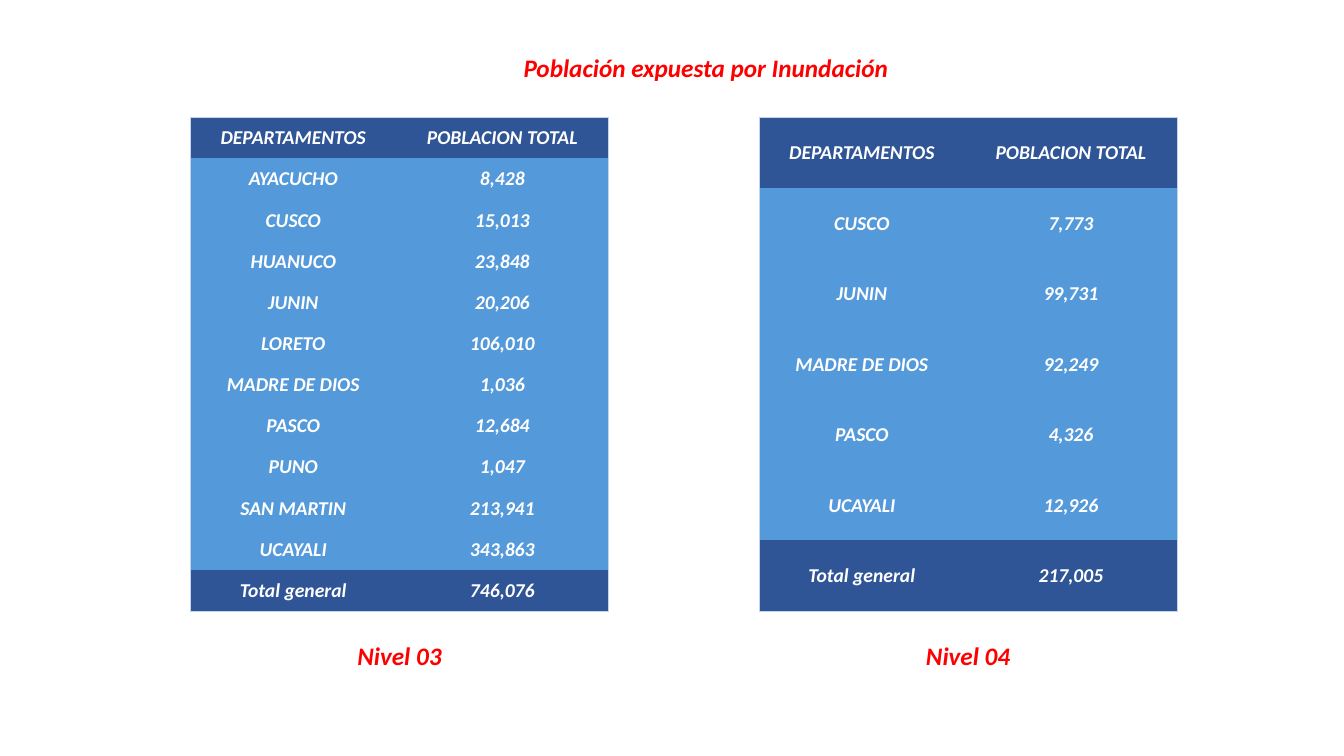
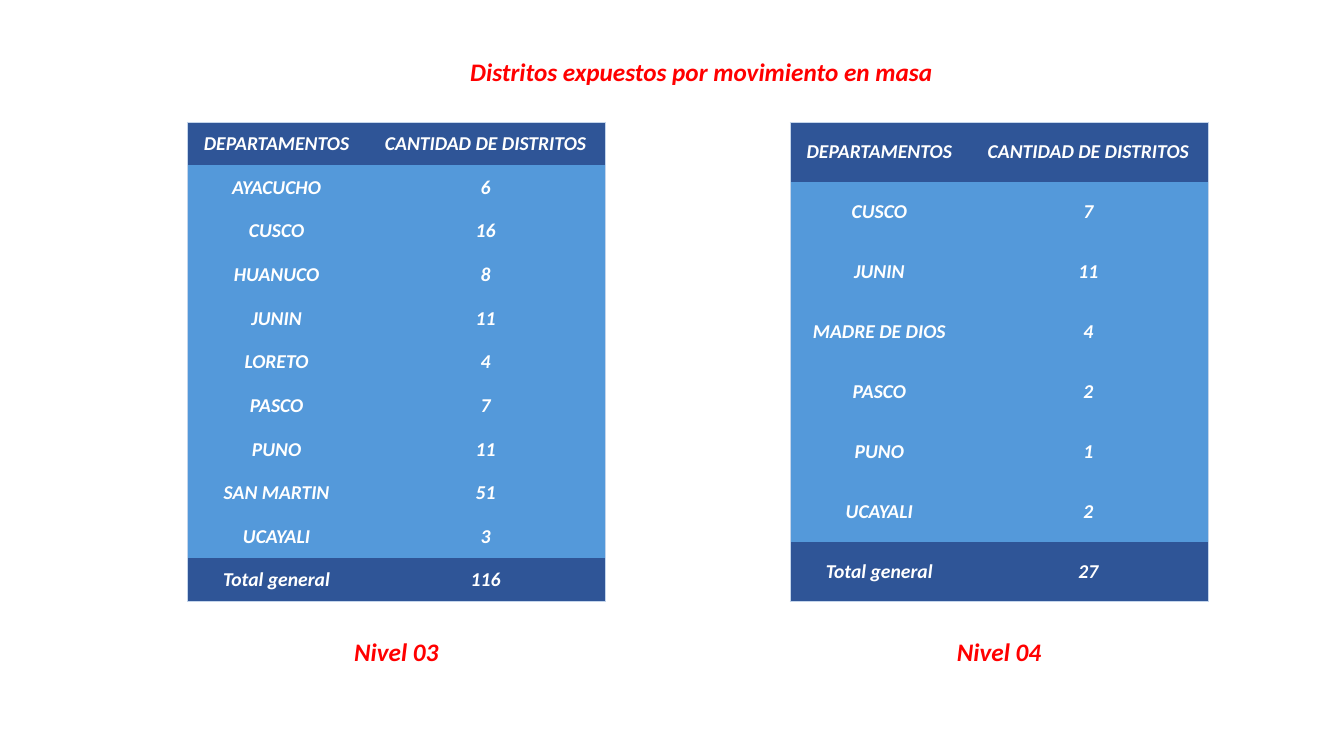
from lxml.etree import SubElement
from pptx import Presentation
from pptx.dml.color import RGBColor as Rgb
from pptx.enum.text import MSO_ANCHOR as Anchor, MSO_AUTO_SIZE as AutoSize, PP_ALIGN as Align
from pptx.oxml.ns import qn
from pptx.util import Cm, Pt

COLORS = {
    "heading": "FF0000",
    "band": "2F5597",
    "body": "5499DA",
    "text": "FFFFFF",
    "border": "C4D5EB",
}
FONT = "Calibri"
NO_GRID_STYLE = "{2D5ABB26-0587-4C30-8999-92F81FD0307C}"
TABLE_WIDTH = 10.54
HEADING_HEIGHT = 1.02
CAPTION_WIDTH = 2.8

SLIDES = [
    {
        "title": "Población expuesta por Inundación",
        "title_box": (12.9, 1.19, 9.78),
        "measure": "POBLACION TOTAL",
        "first_column": 5.18,
        "top": 2.95,
        "height": 12.45,
        "caption_top": 16,
        "levels": [
            ("Nivel 03", 4.8, [
                ("AYACUCHO", "8,428"),
                ("CUSCO", "15,013"),
                ("HUANUCO", "23,848"),
                ("JUNIN", "20,206"),
                ("LORETO", "106,010"),
                ("MADRE DE DIOS", "1,036"),
                ("PASCO", "12,684"),
                ("PUNO", "1,047"),
                ("SAN MARTIN", "213,941"),
                ("UCAYALI", "343,863"),
                ("Total general", "746,076"),
            ]),
            ("Nivel 04", 19.13, [
                ("CUSCO", "7,773"),
                ("JUNIN", "99,731"),
                ("MADRE DE DIOS", "92,249"),
                ("PASCO", "4,326"),
                ("UCAYALI", "12,926"),
                ("Total general", "217,005"),
            ]),
        ],
    },
    {
        "title": "Distritos expuestos por movimiento en masa",
        "title_box": (11.53, 1.3, 12.29),
        "measure": "CANTIDAD DE DISTRITOS",
        "first_column": 4.5,
        "top": 3.07,
        "height": 12.09,
        "caption_top": 15.9,
        "levels": [
            ("Nivel 03", 4.72, [
                ("AYACUCHO", "6"),
                ("CUSCO", "16"),
                ("HUANUCO", "8"),
                ("JUNIN", "11"),
                ("LORETO", "4"),
                ("PASCO", "7"),
                ("PUNO", "11"),
                ("SAN MARTIN", "51"),
                ("UCAYALI", "3"),
                ("Total general", "116"),
            ]),
            ("Nivel 04", 19.91, [
                ("CUSCO", "7"),
                ("JUNIN", "11"),
                ("MADRE DE DIOS", "4"),
                ("PASCO", "2"),
                ("PUNO", "1"),
                ("UCAYALI", "2"),
                ("Total general", "27"),
            ]),
        ],
    },
]


def write(frame, text, size, color):
    """Put one centred bold italic line into a text frame."""
    frame.text = text
    line = frame.paragraphs[0]
    line.alignment = Align.CENTER
    font = line.runs[0].font
    font.name, font.size, font.bold, font.italic = FONT, Pt(size), True, True
    font.color.rgb = Rgb.from_string(COLORS[color])


def place_heading(heading, text, left, top, width, wrap):
    """Place and format a red heading in the given box."""
    heading.left, heading.top = Cm(left), Cm(top)
    heading.width, heading.height = Cm(width), Cm(HEADING_HEIGHT)
    frame = heading.text_frame
    frame.word_wrap = wrap
    frame.auto_size = AutoSize.SHAPE_TO_FIT_TEXT
    frame.vertical_anchor = Anchor.TOP
    write(frame, text, 18, "heading")


def add_border(cell, side):
    """Draw a thin line on one side of a cell."""
    line = SubElement(cell._tc.get_or_add_tcPr(), qn(f"a:ln{side}"), w=str(Pt(0.5)))
    fill = SubElement(line, qn("a:solidFill"))
    SubElement(fill, qn("a:srgbClr"), val=COLORS["border"])


def format_cell(cell, text, fill, sides):
    """Fill a cell with its text, colour and outer borders."""
    cell.margin_left = cell.margin_right = cell.margin_top = Cm(0.02)
    cell.margin_bottom = 0
    cell.vertical_anchor = Anchor.MIDDLE
    write(cell.text_frame, text, 14, "text")
    for side in sides:
        add_border(cell, side)
    cell.fill.solid()
    cell.fill.fore_color.rgb = Rgb.from_string(COLORS[fill])


def add_level_table(slide, rows, left, top, height, first_column):
    """Add a two-column table with dark first and last rows."""
    table = slide.shapes.add_table(
        len(rows), 2, Cm(left), Cm(top), Cm(TABLE_WIDTH), Cm(height)).table
    table._tbl.tblPr.find(qn("a:tableStyleId")).text = NO_GRID_STYLE
    table.columns[0].width = Cm(first_column)
    table.columns[1].width = Cm(TABLE_WIDTH - first_column)
    last = len(rows) - 1
    for row, values in enumerate(rows):
        table.rows[row].height = Cm(height / len(rows))
        fill = "band" if row in (0, last) else "body"
        edge = {0: "T", last: "B"}.get(row, "")
        for column, value in enumerate(values):
            format_cell(table.cell(row, column), value, fill, "LR"[column] + edge)


def add_exposure_slide(deck, content):
    """Add a titled slide with one captioned table per level."""
    slide = deck.slides.add_slide(deck.slide_layouts[5])
    place_heading(slide.shapes.title, content["title"], *content["title_box"], wrap=False)
    header = ("DEPARTAMENTOS", content["measure"])
    for level, left, departments in content["levels"]:
        add_level_table(slide, [header, *departments], left, content["top"],
                        content["height"], content["first_column"])
        caption = slide.shapes.add_textbox(0, 0, 0, 0)
        place_heading(caption, level, left + (TABLE_WIDTH - CAPTION_WIDTH) / 2,
                      content["caption_top"], CAPTION_WIDTH, wrap=True)


def main():
    """Build and save the presentation."""
    deck = Presentation()
    deck.slide_width, deck.slide_height = Cm(33.87), Cm(19.05)
    for content in SLIDES:
        add_exposure_slide(deck, content)
    deck.save("out.pptx")


if __name__ == "__main__":
    main()
